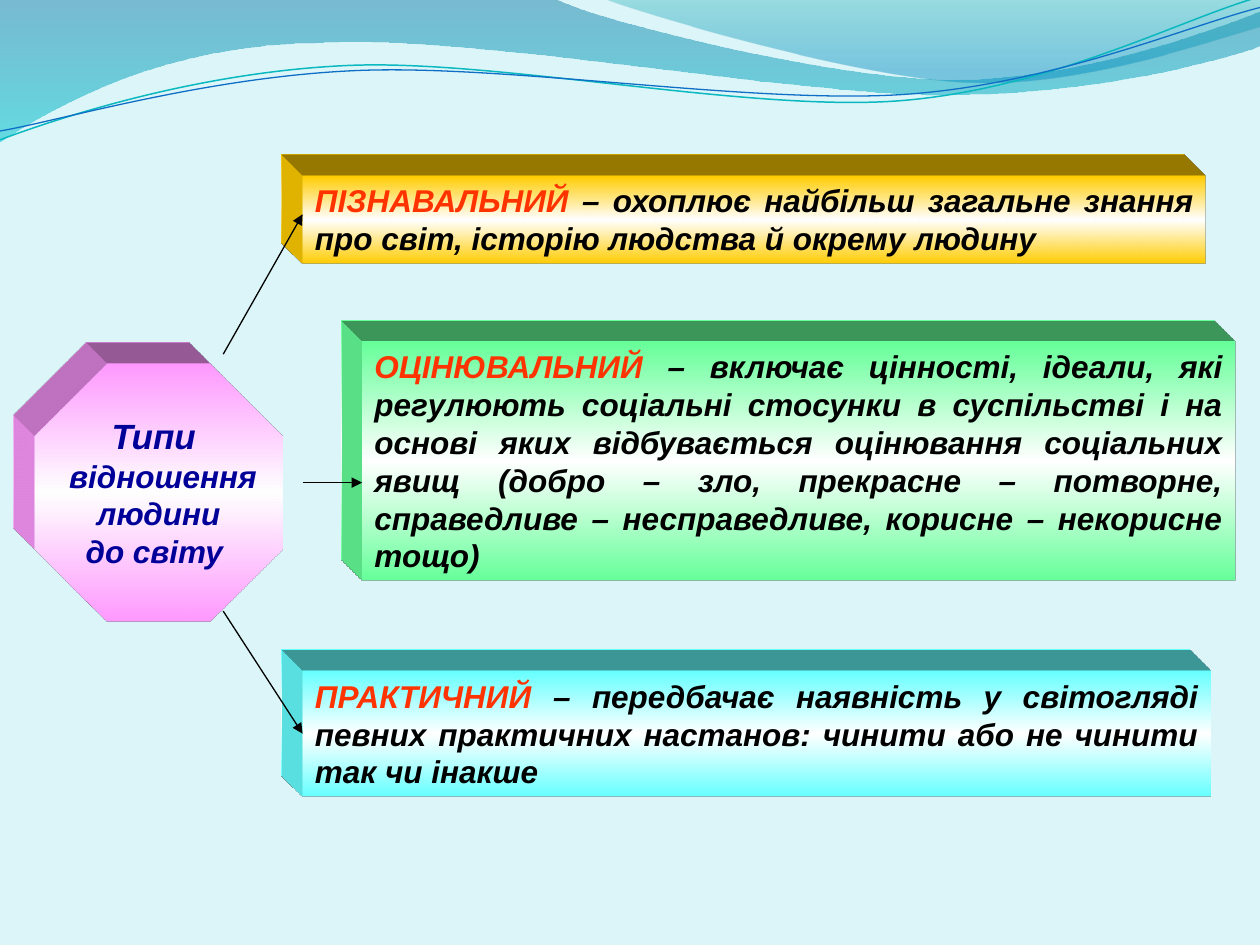
from math import cos, radians, sin

from lxml.etree import SubElement as Sub
from pptx import Presentation
from pptx.dml.color import RGBColor
from pptx.enum.shapes import MSO_CONNECTOR as Link, MSO_SHAPE as Kind
from pptx.enum.text import MSO_ANCHOR as Anchor, MSO_AUTO_SIZE as Auto, PP_ALIGN as Align
from pptx.oxml.ns import qn
from pptx.util import Cm, Pt

rgb = RGBColor.from_string

deck = Presentation()
deck.slide_width, deck.slide_height = Cm(25.4), Cm(19.05)
slide = deck.slides.add_slide(deck.slide_layouts[6])
slide.background.fill.solid()
slide.background.fill.fore_color.rgb = rgb("DBF5F9")
shapes = slide.shapes


def paint(shape, *stops):
    """Fill top to bottom with stops of (percent, hex, opacity), no line."""
    shape.shadow.inherit = False
    shape.line.fill.background()
    shape.fill.gradient()
    shape.fill.gradient_angle = 270
    grad = shape._element.spPr.find(qn("a:gradFill"))
    row = grad.find(qn("a:gsLst"))
    for old in list(row):
        row.remove(old)
    for spot, tone, alpha in stops:
        stop = Sub(row, qn("a:gs"), pos=str(spot * 1000))
        color = Sub(stop, qn("a:srgbClr"), val=tone)
        if alpha < 100:
            Sub(color, qn("a:alpha"), val=str(alpha * 1000))


def outline(start, parts, close=True):
    """Draw a path on a 2.54 cm grid; pairs are lines, sixes are curves."""
    dots = [start]
    for part in parts:
        dots += zip(part[::2], part[1::2])
    dots = [(x * 1000, y * 1000) for x, y in dots]
    pen = shapes.build_freeform(*dots[0], scale=Cm(2.54) / 1000)
    pen.add_line_segments(dots[1:], close=close)
    shape = pen.convert_to_shape()
    shape.shadow.inherit = False
    legs = iter(list(shape._element.spPr.iter(qn("a:lnTo"))))
    for part in parts:
        curve = next(legs)
        if len(part) == 6:
            curve.tag = qn("a:cubicBezTo")
            for leg in (next(legs), next(legs)):
                curve.append(leg[0])
                leg.getparent().remove(leg)
    return shape


# Wave bands
band = outline((0, -0.01), [
    (4.4, -0.01), (4.76, 0.17, 6.64, 0.63, 7.58, 0.63),
    (8.53, 0.63, 9.58, 0.26, 10, 0.09), (10.01, 0.36),
    (9.83, 0.44, 8.7, 0.76, 7.46, 0.75), (6.22, 0.75, 3.82, 0.28, 2.57, 0.34),
    (1.29, 0.35, 0.46, 0.83, -0.01, 1.13)])
paint(band, (0, "0074A1", 45), (100, "00C6CF", 55))
band = outline((4.79, -0.01), [
    (5.09, 0.11, 6.82, 0.62, 7.69, 0.65), (8.56, 0.69, 9.61, 0.32, 10, 0.21),
    (10, 0)])
paint(band, (0, "00A1A9", 30), (80, "008BBF", 45))

# Wave lines, laid level and then turned about their middle
turn = radians(2.7)
for mid, dots, tone, width in [
    ((4.99, 0.58), [(0, 1.11), (0.48, 0.93), (1.58, 0.57), (2.77, 0.52),
                    (3.95, 0.47), (5.93, 0.89), (7.13, 0.8),
                    (8.33, 0.71), (9.38, 0.15), (9.98, -0.02)], "0AB8BF", 0.85),
    ((5, 0.59), [(0, 1.04), (0.47, 0.96), (1.64, 0.61), (2.83, 0.56),
                 (4.03, 0.51), (5.97, 0.83), (7.17, 0.75),
                 (8.36, 0.67), (9.41, 0.21), (10, 0.06)], "0F6FC6", 0.75),
]:
    flat = []
    for x, y in dots:
        dx, dy = x - mid[0], y - mid[1]
        flat.append((mid[0] + dx * cos(turn) - dy * sin(turn),
                     mid[1] + dx * sin(turn) + dy * cos(turn)))
    curves = [sum(flat[n:n + 3], ()) for n in (1, 4, 7)]
    wave = outline(flat[0], curves, close=False)
    wave.rotation = 357.3
    wave.fill.background()
    wave.line.color.rgb = rgb(tone)
    wave.line.width = Pt(width)

# Extruded blocks: three boxes and the hub
blocks = []
for kind, x, y, w, h, tone in [
    (Kind.RECTANGLE, 6.1, 3.53, 18.21, 1.78, "FFCC00"),
    (Kind.RECTANGLE, 7.3, 6.88, 17.6, 4.83, "66FF99"),
    (Kind.RECTANGLE, 6.1, 13.52, 18.31, 2.54, "66FFFF"),
    (Kind.OCTAGON, 0.7, 7.32, 5, 5.21, "FF99FF"),
]:
    block = shapes.add_shape(kind, Cm(x), Cm(y), Cm(w), Cm(h))
    paint(block, (0, tone, 100), (50, "FFFFFF", 100), (100, tone, 100))
    props = block._element.spPr
    scene = Sub(props, qn("a:scene3d"))
    Sub(scene, qn("a:camera"), prst="legacyObliqueTopLeft")
    Sub(scene, qn("a:lightRig"), rig="legacyFlat3", dir="b")
    solid = Sub(props, qn("a:sp3d"), extrusionH="430200", prstMaterial="legacyMatte")
    for bevel in ("a:bevelT", "a:bevelB"):
        Sub(solid, qn(bevel), w="13500", h="13500", prst="angle")
    Sub(Sub(solid, qn("a:extrusionClr")), qn("a:srgbClr"), val=tone)
    blocks.append(block)
*boxes, hub = blocks
hub.adjustments[0] = 0.293

# Box texts
for box, (term, note) in zip(boxes, [
    ("ПІЗНАВАЛЬНИЙ", " – охоплює найбільш загальне знання про світ, "
     "історію людства й окрему людину "),
    ("ОЦІНЮВАЛЬНИЙ ", "– включає цінності, ідеали, які регулюють соціальні "
     "стосунки в суспільстві і на основі яких відбувається оцінювання "
     "соціальних явищ (добро – зло, прекрасне – потворне, справедливе – "
     "несправедливе, корисне – некорисне тощо) "),
    ("ПРАКТИЧНИЙ ", "– передбачає наявність у світогляді певних практичних "
     "настанов: чинити або не чинити так чи інакше "),
]):
    frame = box.text_frame
    frame.word_wrap = True
    frame.auto_size = Auto.SHAPE_TO_FIT_TEXT
    frame.vertical_anchor = Anchor.TOP
    para = frame.paragraphs[0]
    para.alignment = Align.JUSTIFY
    font = para.font
    font.name, font.size, font.bold, font.italic = "Arial", Pt(18), True, True
    for text, tone in ((term, "FF3300"), (note, "000000")):
        run = para.add_run()
        run.text = text
        run.font.color.rgb = rgb(tone)

# Hub text
frame = hub.text_frame
frame.word_wrap = False
frame.vertical_anchor = Anchor.MIDDLE
frame.text = "Типи \n відношення\n людини \nдо світу "
for row, para in enumerate(frame.paragraphs):
    para.alignment = Align.CENTER
    font = para.font
    font.name, font.bold, font.italic = "Arial", True, True
    font.size = Pt(18 if row else 20)
    font.color.rgb = rgb("000099")

# Arrows from the hub to the boxes
for ax, ay, bx, by, goal in [
    (6.1, 9.73, 7.3, 9.73, None),
    (4.5, 12.32, 6.1, 14.79, boxes[2]),
    (4.5, 7.14, 6.1, 4.32, None),
]:
    arrow = shapes.add_connector(Link.STRAIGHT, Cm(ax), Cm(ay), Cm(bx), Cm(by))
    if goal:
        arrow.end_connect(goal, 1)
    arrow.line.color.rgb = rgb("000000")
    arrow.line.width = Pt(0.75)
    Sub(arrow.line._get_or_add_ln(), qn("a:tailEnd"), type="triangle")
    Sub(arrow._element.spPr, qn("a:effectLst"))

deck.save("out.pptx")
